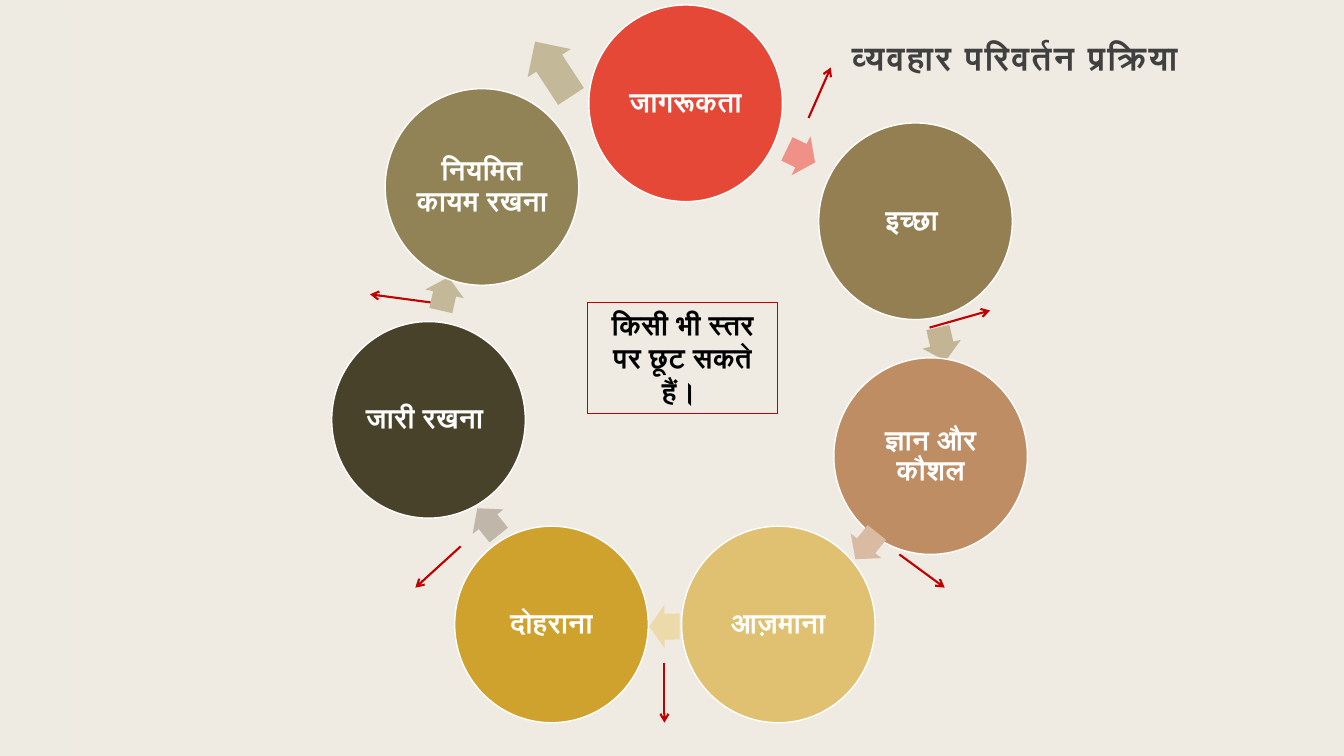
"""Build the behaviour change process slide: a cycle of seven stages with exits."""
from dataclasses import dataclass

import pptx
import pptx.dml.color
import pptx.enum.shapes
import pptx.enum.text
import pptx.oxml.ns
import pptx.util
from lxml import etree

Inches = pptx.util.Inches
Pt = pptx.util.Pt
RGB = pptx.dml.color.RGBColor.from_string
Shape = pptx.enum.shapes.MSO_SHAPE
Align = pptx.enum.text.PP_ALIGN
Anchor = pptx.enum.text.MSO_ANCHOR
qn = pptx.oxml.ns.qn


@dataclass(frozen=True)
class Theme:
    font: str = "Arial"
    background: str = "EEEBE2"
    panel: str = "EFEBE3"
    title: str = "404040"
    white: str = "FFFFFF"
    black: str = "000000"
    accent: str = "C00000"
    red: str = "E54837"
    olive: str = "947F53"
    copper: str = "BE8D64"
    sand: str = "E0C171"
    gold: str = "CFA22D"
    dark: str = "49422B"
    moss: str = "928356"
    pink: str = "EF9187"
    khaki: str = "C3B494"
    peach: str = "D8BBA2"
    cream: str = "ECDAAA"
    stone: str = "C0B6AA"
    sage: str = "C3B999"
    title_size: int = 24
    body_size: int = 20


theme = Theme()
deck = pptx.Presentation()
deck.slide_width = Inches(13.33)
deck.slide_height = Inches(7.5)
page = deck.slides.add_slide(deck.slide_layouts[6])
page.background.fill.solid()
page.background.fill.fore_color.rgb = RGB(theme.background)


def add_filled(kind, left, top, width, height, color):
    """Add a plain filled shape without outline or shadow."""
    shape = page.shapes.add_shape(kind, Inches(left), Inches(top), Inches(width), Inches(height))
    shape.shadow.inherit = False
    shape.fill.solid()
    shape.fill.fore_color.rgb = RGB(color)
    shape.line.fill.background()
    return shape


def write(shape, text, size, color, align, spacing, insets):
    """Write one bold Devanagari run in a shape and return it."""
    frame = shape.text_frame
    frame.word_wrap = True
    frame.margin_left, frame.margin_top, frame.margin_right, frame.margin_bottom = map(Inches, insets)
    para = frame.paragraphs[0]
    para.alignment = align
    para.line_spacing = spacing
    span = para.add_run()
    span.text = text
    span.font.size = Pt(size)
    span.font.bold = True
    span.font.color.rgb = RGB(color)
    span.font.name = theme.font
    etree.SubElement(span.font._element, qn("a:cs"), typeface=theme.font)
    return span


add_filled(Shape.RECTANGLE, 0.67, 0.03, 12, 7.47, theme.panel)

title_box = page.shapes.add_textbox(Inches(8.33), Inches(0.13), Inches(4.5), Inches(0.69))
title = write(title_box, "व्यवहार परिवर्तन प्रक्रिया", theme.title_size, theme.title,
              Align.LEFT, 1.3, (0.12, 0.12, 0.12, 0.1))
title.font._element.set("spc", "150")

stages = [
    ("जागरूकता", 5.84, 0.05, theme.red, (7.79, 1.33, 0.31, 0.43, theme.pink), 25.7),
    ("इच्छा ", 8.12, 1.22, theme.olive, (9.17, 3.22, 0.34, 0.39, theme.khaki), 77.1),
    ("ज्ञान और कौशल", 8.27, 3.55, theme.copper, (8.42, 5.22, 0.34, 0.39, theme.peach), 128.8),
    ("आज़माना", 6.76, 5.22, theme.sand, (6.44, 6, 0.3, 0.43, theme.cream), 179.8),
    ("दोहराना", 4.51, 5.22, theme.gold, (4.67, 4.98, 0.34, 0.39, theme.stone), 231.4),
    ("जारी रखना ", 3.29, 3.19, theme.dark, (4.24, 2.72, 0.34, 0.39, theme.sage), 282.9),
    ("नियमित कायम रखना ", 3.82, 0.88, theme.moss, (5.16, 0.43, 0.65, 0.51, theme.sage), 236.8),
]
for label, left, top, color, arrow_box, angle in stages:
    circle = add_filled(Shape.OVAL, left, top, 1.92, 1.95, color)
    circle.line.color.rgb = RGB(theme.white)
    circle.line.width = Pt(1)
    circle.text_frame.vertical_anchor = Anchor.MIDDLE
    write(circle, label, theme.body_size, theme.white, Align.CENTER, 0.9, [0.03] * 4)
    arrow = add_filled(Shape.RIGHT_ARROW, *arrow_box)
    arrow.adjustments[0] = 0.6
    arrow.adjustments[1] = 0.5
    arrow.rotation = angle

note = page.shapes.add_textbox(Inches(5.83), Inches(3), Inches(1.88), Inches(1.1))
note.line.color.rgb = RGB(theme.accent)
note.line.width = Pt(0.75)
write(note, "किसी भी स्तर पर छूट सकते हैं। ", theme.body_size, theme.black,
      Align.CENTER, 1.0, (0.09, 0.05, 0.09, 0.05))

exits = [
    (8.02, 1.17, 8.24, 0.67),
    (4.27, 3, 3.67, 2.92),
    (4.57, 5.42, 4.12, 5.83),
    (6.59, 6.58, 6.59, 7.17),
    (8.92, 5.5, 9.37, 5.83),
    (9.22, 3.25, 9.82, 3.08),
]
for ends in exits:
    exit_line = page.shapes.add_connector(pptx.enum.shapes.MSO_CONNECTOR.STRAIGHT, *map(Inches, ends))
    exit_line.line.color.rgb = RGB(theme.accent)
    exit_line.line.width = Pt(1.5)
    etree.SubElement(exit_line.line._get_or_add_ln(), qn("a:tailEnd"), type="arrow")
    etree.SubElement(exit_line._element.spPr, qn("a:effectLst"))

deck.save("out.pptx")
